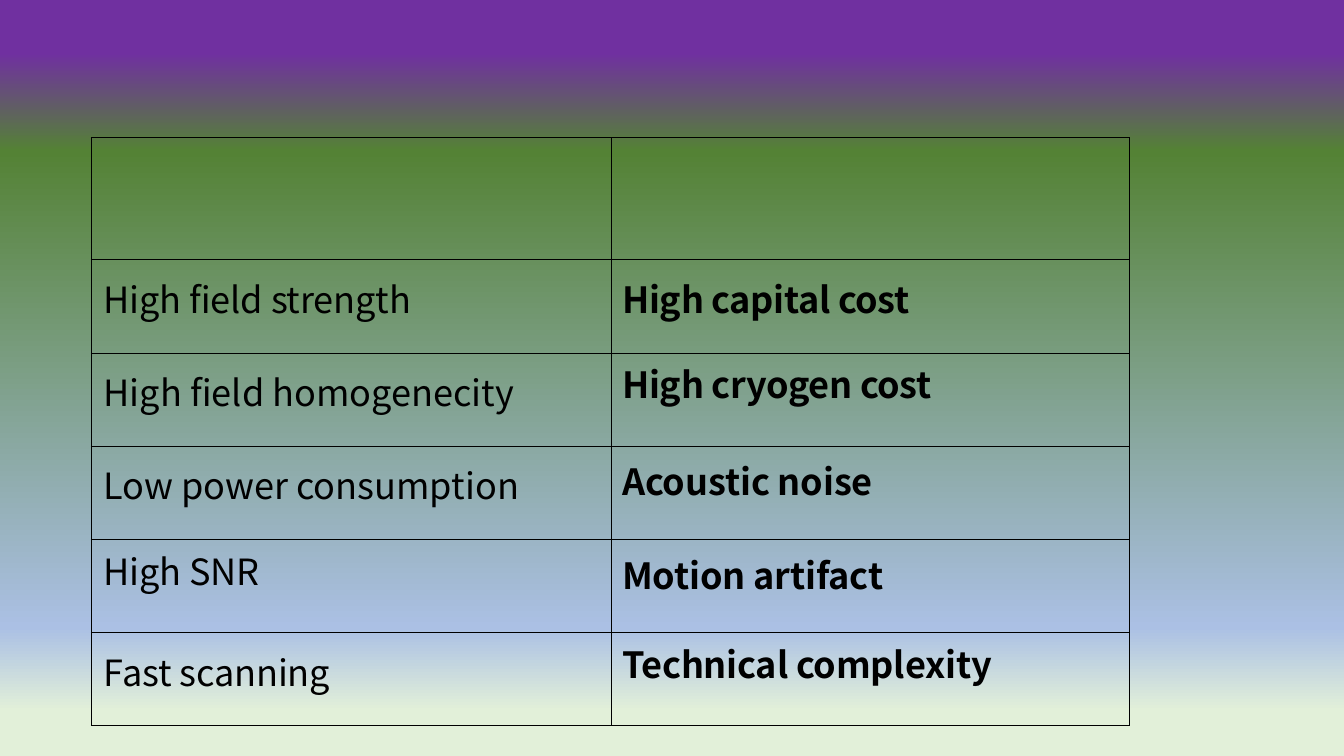
from dataclasses import dataclass

import lxml.etree
import pptx
import pptx.dml.color
import pptx.oxml
import pptx.oxml.ns
import pptx.util

Pt = pptx.util.Pt
qn = pptx.oxml.ns.qn


@dataclass(frozen=True)
class Theme:
    font: str = "Noto Sans CJK SC"
    size: float = 55
    ink: str = "000000"
    border: float = 0.5
    line_spacing: float = 0.93
    gradient: tuple = ((7, "7030A0"), (20, "548235"), (83, "ABC0E4"), (94, "E2F0D9"))


def write_text(tf, text, *, theme, bold=False, spacing=0, leading=None):
    """Fill a text frame with one run; spacing is the tracking in points."""
    p = tf.paragraphs[0]
    p.line_spacing = leading or theme.line_spacing
    r = p.add_run()
    r.text = text
    r.font.name = theme.font
    r.font.size = Pt(theme.size)
    r.font.bold = bold
    r.font.color.rgb = pptx.dml.color.RGBColor.from_string(theme.ink)
    rPr = r.font._element
    rPr.set("spc", str(round(spacing * 100)))
    ea = lxml.etree.SubElement(rPr, qn("a:ea"))
    ea.set("typeface", theme.font)
    rPr.find(qn("a:latin")).addnext(ea)


class SlideBuilder:
    def __init__(self, prs, theme):
        self.theme = theme
        self.s = prs.slides.add_slide(prs.slide_layouts[6])

    def background(self):
        fill = self.s.background.fill
        fill.gradient()
        fill.gradient_angle = 270
        stops = self.s.background._cSld.find(".//" + qn("a:gsLst"))
        for stop in list(stops):
            stops.remove(stop)
        for percent, color in self.theme.gradient:
            gs = lxml.etree.SubElement(stops, qn("a:gs"), pos=str(percent * 1000))
            lxml.etree.SubElement(gs, qn("a:srgbClr"), val=color)

    def border(self, cell):
        tcPr = cell._tc.get_or_add_tcPr()
        for i, side in enumerate(("lnL", "lnR", "lnT", "lnB")):
            ln = pptx.oxml.parse_xml(
                f'<a:{side} xmlns:a="http://schemas.openxmlformats.org/drawingml/2006/main"'
                f' w="{Pt(self.theme.border)}"><a:solidFill>'
                f'<a:srgbClr val="{self.theme.ink}"/></a:solidFill></a:{side}>')
            tcPr.insert(i, ln)

    def table(self, left, top, widths, heights, rows, insets):
        """Draw an empty header row, then rows of (text, top margin, format) cells."""
        frame = self.s.shapes.add_table(len(heights), len(widths), Pt(left), Pt(top),
                                        Pt(sum(widths)), Pt(sum(heights)))
        tbl = frame.table
        tbl.first_row = tbl.horz_banding = False
        for col, width in zip(tbl.columns, widths):
            col.width = Pt(width)
        for row, height in zip(tbl.rows, heights):
            row.height = Pt(height)
        for cell in tbl.iter_cells():
            cell.fill.background()
            self.border(cell)
        for i, row in enumerate(rows, start=1):
            for j, (text, margin_top, fmt) in enumerate(row):
                cell = tbl.cell(i, j)
                cell.margin_left, cell.margin_top = Pt(insets[j]), Pt(margin_top)
                cell.margin_right = cell.margin_bottom = 0
                write_text(cell.text_frame, text, theme=self.theme, bold=j == 1, **fmt)


LOW, HIGH = 23, 11  # top margins of the two text positions in a row
FIXED = Pt(69.1)

ROWS = [
    [("High field strength", LOW, dict(spacing=-0.2)),
     ("High capital cost", LOW, dict(spacing=-0.5))],
    [("High field homogenecity", LOW, {}),
     ("High cryogen cost", HIGH, dict(spacing=-0.5))],
    [("Low power consumption", LOW, {}),
     ("Acoustic noise", LOW, dict(spacing=-0.2, leading=FIXED))],
    [("High SNR", HIGH, dict(spacing=-0.2)),
     ("Motion artifact", LOW, dict(spacing=-0.2, leading=FIXED))],
    [("Fast scanning", LOW, dict(spacing=-0.2)),
     ("Technical complexity", HIGH, dict(spacing=-0.3))],
]


def main():
    prs = pptx.Presentation()
    prs.slide_width, prs.slide_height = Pt(2047.7), Pt(1152)
    slide = SlideBuilder(prs, Theme())
    slide.background()
    slide.table(138.5, 209.5, widths=[792, 790], heights=[186] + [142] * 5,
                rows=ROWS, insets=[19.5, 17.5])
    prs.save("out.pptx")


if __name__ == "__main__":
    main()
